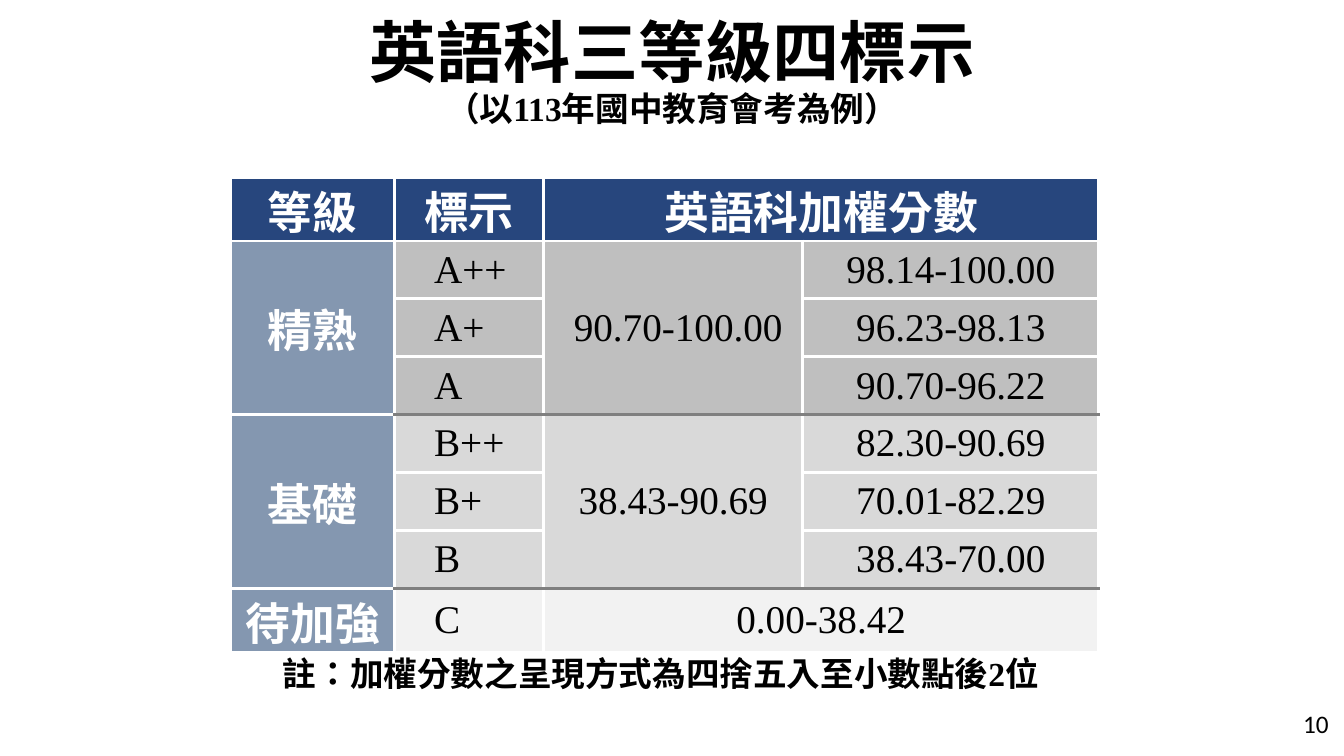
import pptx
import pptx.dml.color
import pptx.enum.lang
import pptx.enum.text
import pptx.oxml
import pptx.oxml.ns
import pptx.util

Cm = pptx.util.Cm
ALIGN = pptx.enum.text.PP_ALIGN
MIDDLE = pptx.enum.text.MSO_ANCHOR.MIDDLE
TOP = pptx.enum.text.MSO_ANCHOR.TOP
LANGUAGE = pptx.enum.lang.MSO_LANGUAGE_ID.TRADITIONAL_CHINESE

COLORS = {
    "black": "000000", "white": "FFFFFF", "navy": "27467D", "slate": "8497B0",
    "rule": "7F7F7F", "A": "BFBFBF", "B": "D9D9D9", "C": "F2F2F2",
}
SERIF, SANS = "Times New Roman", "Calibri"
COLUMN_WIDTHS = [4.12, 3.76, 6.53, 7.46]
HEADING_ROW, SCORE_ROW = 1.6, 1.46
ROW_HEIGHTS = [HEADING_ROW] + [SCORE_ROW] * 6 + [HEADING_ROW]
LEVELS = [
    ("精熟", "A", "90.70-100.00",
     [("A++", "98.14-100.00"), ("A+", "96.23-98.13"), ("A", "90.70-96.22")]),
    ("基礎", "B", "38.43-90.69",
     [("B++", "82.30-90.69"), ("B+", "70.01-82.29"), ("B", "38.43-70.00")]),
    ("待加強", "C", "0.00-38.42", [("C", None)]),
]


class SlideBuilder:
    def __init__(self, page):
        self.page = page

    def color(self, name):
        return pptx.dml.color.RGBColor.from_string(COLORS[name])

    def span(self, para, text, size, font=SERIF, color="black", bold=False):
        span = para.add_run()
        span.text = text
        span.font.size = pptx.util.Pt(size)
        span.font.name = font
        span.font.bold = bold
        span.font.language_id = LANGUAGE
        span.font.color.rgb = self.color(color)

    def text_box(self, left, top, width, height, anchor=TOP, align=ALIGN.LEFT):
        box = self.page.shapes.add_textbox(Cm(left), Cm(top), Cm(width), Cm(height))
        frame = box.text_frame
        frame.word_wrap = True
        frame.vertical_anchor = anchor
        para = frame.paragraphs[0]
        para.alignment = align
        return para

    def table(self, left, top, widths, heights):
        table = self.page.shapes.add_table(
            len(heights), len(widths), Cm(left), Cm(top),
            Cm(sum(widths)), Cm(sum(heights))).table
        for column, width in zip(table.columns, widths):
            column.width = Cm(width)
        for row, height in zip(table.rows, heights):
            row.height = Cm(height)
        return table

    def cell_frame(self, cell, fill, top="white", bottom="white"):
        properties = cell._tc.get_or_add_tcPr()
        sides = {"L": "white", "R": "white", "T": top, "B": bottom}
        for side, color in sides.items():
            properties.append(pptx.oxml.parse_xml(
                f'<a:ln{side} {pptx.oxml.ns.nsdecls("a")} w="28575"><a:solidFill>'
                f'<a:srgbClr val="{COLORS[color]}"/></a:solidFill></a:ln{side}>'))
        cell.fill.solid()
        cell.fill.fore_color.rgb = self.color(fill)

    def cell_text(self, cell, text, heading=False, align=ALIGN.CENTER, left=0.05, right=0.05):
        cell.vertical_anchor = MIDDLE
        cell.margin_left, cell.margin_right = Cm(left), Cm(right)
        cell.margin_top = cell.margin_bottom = 0
        para = cell.text_frame.paragraphs[0]
        para.alignment = align
        if heading:
            self.span(para, text, 32, color="white", bold=True)
        else:
            self.span(para, text, 28)


def main():
    deck = pptx.Presentation()
    deck.slide_width, deck.slide_height = Cm(33.87), Cm(19.05)
    builder = SlideBuilder(deck.slides.add_slide(deck.slide_layouts[6]))

    # Title
    title = builder.text_box(2.33, 0.03, 29.21, 3.68, MIDDLE, ALIGN.CENTER)
    title.line_spacing = 0.9
    builder.span(title, "英語科三等級四標示", 48, SANS, bold=True)
    title.add_line_break()
    for text, font in (("（以", SANS), ("113", SERIF), ("年國中教育會考為例）", SANS)):
        builder.span(title, text, 24, font, bold=True)

    # Score table: header row
    table = builder.table(5.82, 4.47, COLUMN_WIDTHS, ROW_HEIGHTS)
    for column in range(4):
        builder.cell_frame(table.cell(0, column), "navy")
    table.cell(0, 2).merge(table.cell(0, 3))
    for column, heading in enumerate(["等級", "標示", "英語科加權分數"]):
        builder.cell_text(table.cell(0, column), heading, heading=True)

    # Score table: one group of rows per level, grey rules between groups
    first = 1
    for level, shade, score_range, marks in LEVELS:
        last = first + len(marks) - 1
        for row, (mark, score) in enumerate(marks, first):
            top = "rule" if row == first and first > 1 else "white"
            bottom = "rule" if row == last and last < 7 else "white"
            builder.cell_frame(table.cell(row, 0), "slate")
            for column in (1, 2, 3):
                builder.cell_frame(table.cell(row, column), shade, top, bottom)
            builder.cell_text(table.cell(row, 1), mark, align=ALIGN.LEFT, left=1)
            if score:
                builder.cell_text(table.cell(row, 3), score, left=0.18, right=0.18)
        if last > first:
            table.cell(first, 0).merge(table.cell(last, 0))
            table.cell(first, 2).merge(table.cell(last, 2))
        else:
            table.cell(first, 2).merge(table.cell(first, 3))
        builder.cell_text(table.cell(first, 0), level, heading=True)
        builder.cell_text(table.cell(first, 2), score_range,
                          left=0.3 if shade == "A" else 0.05)
        first = last + 1

    # Note and page number
    note = builder.text_box(6.88, 16.33, 21.08, 1.27)
    builder.span(note, "註：加權分數之呈現方式為四捨五入至小數點後2位", 24, bold=True)
    number = builder.text_box(32.59, 17.73, 1.45, 1.02, MIDDLE)
    builder.span(number, "10", 18, SANS)

    deck.save("out.pptx")


if __name__ == "__main__":
    main()
